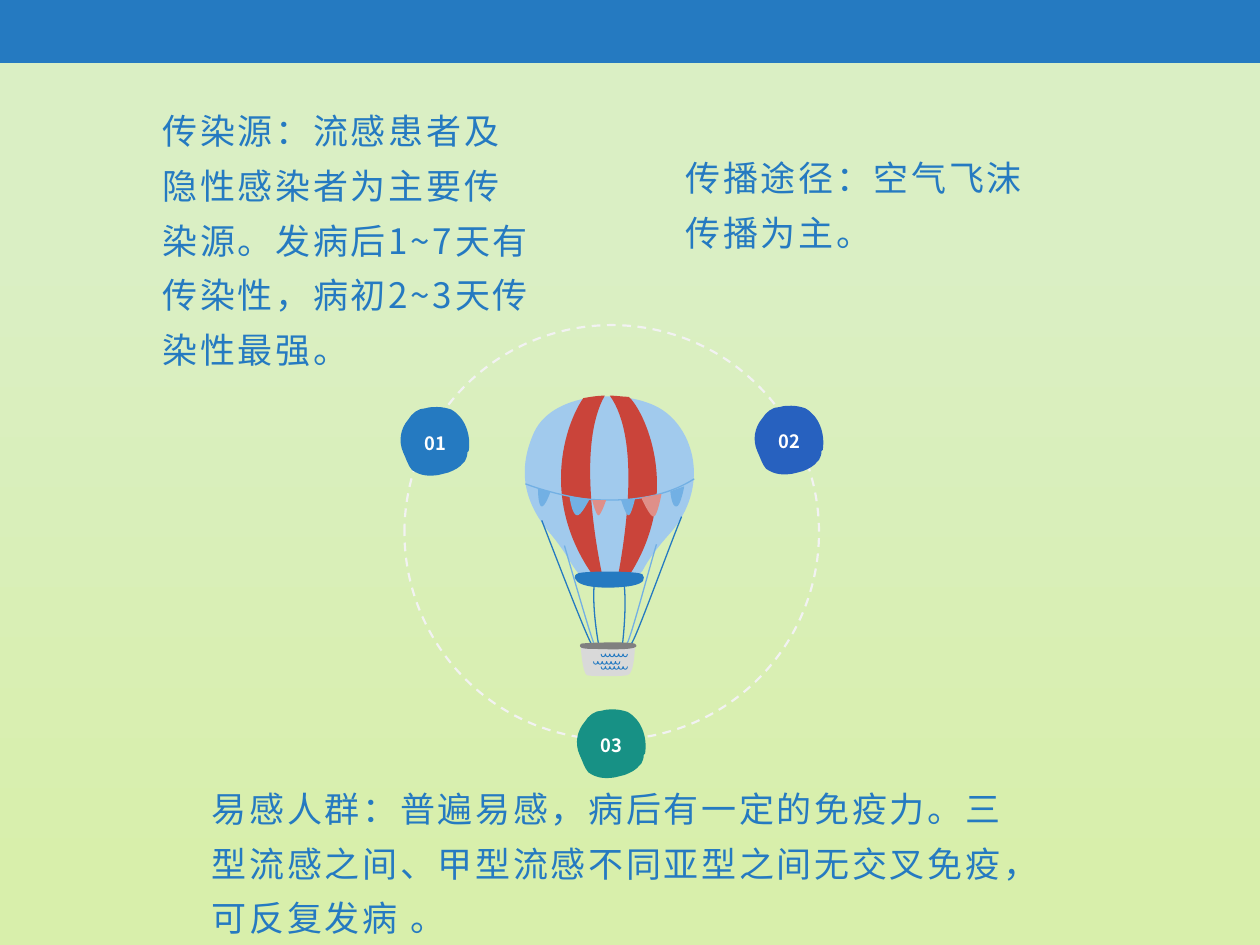
from dataclasses import dataclass

import lxml.etree
import pptx
import pptx.dml.color
import pptx.enum.dml
import pptx.enum.shapes
import pptx.enum.text
import pptx.oxml
import pptx.oxml.ns
import pptx.util
from pptx.util import Inches

FONT = "Noto Sans CJK SC"
COLORS = {
    "blue": "257AC1", "royal": "2761BF", "teal": "179185",
    "sky": "A1CAED", "azure": "72B0E4", "red": "CA443A", "pink": "DF8F89",
    "pale": "D9D9D9", "grey": "808080", "ring": "F2F2F2", "white": "FFFFFF",
    "top": "DAEFC4", "base": "D8EFAB",
}


@dataclass
class Path:
    """A start point and its segments: two numbers a line, six a curve."""
    color: str
    start: tuple
    steps: list


@dataclass
class Badge:
    label: str
    color: str
    x: float
    y: float


@dataclass
class Note:
    text: str
    box: tuple
    anchor: str


BODY = [
    Path("sky", (5.28, 3.27), [
        (5.03, 3.08, 4.4, 3.09, 4.24, 3.43), (4.09, 3.76, 4.18, 4.02, 4.38, 4.25),
        (4.51, 4.41, 4.53, 4.48, 4.59, 4.55), (4.68, 4.65, 5.05, 4.61, 5.1, 4.53),
        (5.15, 4.43, 5.24, 4.32, 5.33, 4.22), (5.62, 3.87, 5.52, 3.45, 5.28, 3.27)]),
]
ROPES = [
    Path("blue", (5.41, 4.1), [(5.3, 4.37, 5.04, 5.09, 5.01, 5.11)]),
    Path("azure", (5.21, 4.32), [(5.12, 4.63, 5.0, 5.09, 4.97, 5.12)]),
    Path("blue", (4.95, 4.61), [(4.95, 4.61, 4.98, 4.76, 4.94, 5.12)]),
    Path("blue", (4.3, 4.13), [(4.4, 4.39, 4.67, 5.09, 4.7, 5.12)]),
    Path("azure", (4.48, 4.33), [(4.57, 4.64, 4.7, 5.09, 4.72, 5.12)]),
    Path("blue", (4.72, 4.61), [(4.72, 4.61, 4.69, 4.76, 4.75, 5.11)]),
]
TRIM = [
    Path("red", (4.8, 3.14), [
        (4.74, 3.14, 4.69, 3.15, 4.63, 3.16), (4.49, 3.36, 4.27, 3.98, 4.73, 4.6),
        (4.75, 4.61, 4.77, 4.61, 4.79, 4.61), (4.73, 4.34, 4.58, 3.53, 4.8, 3.14)]),
    Path("red", (4.99, 3.15), [
        (4.94, 3.15, 4.9, 3.14, 4.84, 3.14), (5.09, 3.49, 4.96, 4.28, 4.9, 4.6),
        (4.92, 4.6, 4.96, 4.59, 4.98, 4.59), (5.44, 3.9, 5.1, 3.24, 4.99, 3.15)]),
    Path("blue", (4.59, 4.55), [
        (4.65, 4.53, 5.08, 4.53, 5.1, 4.56), (5.12, 4.59, 5.12, 4.63, 5.01, 4.65),
        (4.9, 4.67, 4.61, 4.68, 4.57, 4.6), (4.57, 4.6, 4.54, 4.57, 4.59, 4.55)]),
    Path("azure", (4.27, 3.88), [
        (4.27, 3.88, 4.27, 4.02, 4.3, 4.02), (4.33, 4.02, 4.37, 3.9, 4.37, 3.9)]),
    Path("azure", (4.52, 3.94), [
        (4.52, 3.94, 4.54, 4.09, 4.58, 4.09), (4.61, 4.1, 4.68, 3.96, 4.68, 3.96)]),
    Path("azure", (4.93, 3.97), [
        (4.93, 3.97, 4.97, 4.1, 4.99, 4.09), (5.01, 4.09, 5.04, 3.96, 5.04, 3.96)]),
    Path("azure", (5.32, 3.9), [
        (5.32, 3.9, 5.33, 4.03, 5.37, 4.02), (5.4, 4.02, 5.43, 3.87, 5.43, 3.86)]),
    Path("pale", (4.61, 5.13), [
        (4.61, 5.13, 4.62, 5.34, 4.66, 5.36), (4.7, 5.37, 4.92, 5.37, 4.98, 5.36),
        (5.04, 5.35, 5.04, 5.11, 5.04, 5.11)]),
    Path("grey", (4.61, 5.11), [
        (4.62, 5.1, 5.02, 5.09, 5.04, 5.11), (5.12, 5.17, 4.76, 5.15, 4.71, 5.15),
        (4.66, 5.15, 4.58, 5.15, 4.61, 5.11)]),
]
BELT = Path("azure", (4.17, 3.84), [
    (4.17, 3.84, 4.37, 3.92, 4.64, 3.96), (4.88, 3.98, 5.23, 3.98, 5.51, 3.8)])
FLAGS = [
    Path("pink", (4.7, 3.97), [
        (4.7, 3.97, 4.73, 4.09, 4.75, 4.09), (4.77, 4.09, 4.81, 3.97, 4.81, 3.97)]),
    Path("pink", (5.09, 3.95), [
        (5.09, 3.95, 5.16, 4.11, 5.19, 4.1), (5.22, 4.09, 5.25, 3.92, 5.25, 3.92)]),
]
WEAVE = [(4.77, 5.19), (4.71, 5.25), (4.77, 5.29)]
BLOB = ((0.29, 0), [
    (0.33, 0, 0.37, 0.01, 0.4, 0.02), (0.51, 0.08, 0.56, 0.22, 0.54, 0.35),
    (0.53, 0.36), (0.53, 0.39, 0.52, 0.41, 0.51, 0.43), (0.5, 0.44),
    (0.47, 0.48, 0.43, 0.5, 0.38, 0.52), (0.35, 0.53, 0.33, 0.53, 0.3, 0.54),
    (0.23, 0.55, 0.16, 0.55, 0.09, 0.5), (0.06, 0.47, 0.04, 0.4, 0.02, 0.36),
    (-0.02, 0.27, 0, 0.17, 0.06, 0.1), (0.09, 0.05, 0.14, 0.01, 0.2, 0.01),
    (0.23, 0, 0.26, 0, 0.29, 0)])
BADGES = [
    Badge("02", "royal", 5.99, 3.22),
    Badge("01", "blue", 3.18, 3.23),
    Badge("03", "teal", 4.58, 5.63),
]
NOTES = [
    Note("传染源：流感患者及隐性感染者为主要传染源。发病后1~7天有传染性，病初2~3天传染性最强。",
         (1.22, 0.63, 3.12, 2.35), "BOTTOM"),
    Note("传播途径：空气飞沫传播为主。", (5.37, 0.63, 3.12, 1.42), "BOTTOM"),
    Note("易感人群：普遍易感，病后有一定的免疫力。三型流感之间、甲型流感不同亚型之间无交叉免疫，可反复发病 。",
         (1.61, 6.11, 6.52, 1.29), "TOP"),
]


def rgb(name: str) -> pptx.dml.color.RGBColor:
    return pptx.dml.color.RGBColor.from_string(COLORS[name])


def bend(shape, steps: list) -> None:
    """Join each three lines that stand for a curve into one cubic curve."""
    qn = pptx.oxml.ns.qn
    lines = iter(list(shape._element.iter(qn("a:lnTo"))))
    for step in steps:
        line = next(lines)
        if len(step) == 6:
            line.addprevious(curve := lxml.etree.Element(qn("a:cubicBezTo")))
            for part in (line, next(lines), next(lines)):
                curve.append(part[0])
                part.getparent().remove(part)


def draw(shapes, path: Path, width: float = 0) -> None:
    """Fill the path, or stroke it when a width in points is given."""
    pen = shapes.build_freeform(*map(Inches, path.start))
    spots = [(Inches(x), Inches(y)) for step in path.steps
             for x, y in zip(step[::2], step[1::2])]
    pen.add_line_segments(spots, close=not width)
    shape = pen.convert_to_shape()
    bend(shape, path.steps)
    shape.shadow.inherit = False
    if width:
        shape.fill.background()
        shape.line.color.rgb = rgb(path.color)
        shape.line.width = pptx.util.Pt(width)
    else:
        shape.fill.solid()
        shape.fill.fore_color.rgb = rgb(path.color)
        shape.line.fill.background()


def write(shapes, text: str, box: tuple, anchor: str, size: float, color: str):
    """Add a text box and return its paragraph."""
    frame = shapes.add_textbox(*map(Inches, box)).text_frame
    frame.word_wrap = True
    frame.vertical_anchor = pptx.enum.text.MSO_ANCHOR[anchor]
    frame.margin_left = frame.margin_right = Inches(0.07)
    frame.margin_top = frame.margin_bottom = Inches(0.04)
    para = frame.paragraphs[0]
    para.text = text
    font = para.font
    font.name, font.size = FONT, pptx.util.Pt(size)
    font.color.rgb = rgb(color)
    east = pptx.oxml.parse_xml(f'<a:ea {pptx.oxml.ns.nsdecls("a")} typeface="{FONT}"/>')
    font._rPr.append(east)
    return para


def balloon(shapes) -> None:
    for path in BODY:
        draw(shapes, path)
    for path in ROPES:
        draw(shapes, path, 0.75)
    for path in TRIM:
        draw(shapes, path)
    pitch = 0.21 / 6
    for x, y in WEAVE:
        arcs = [(x + i * pitch, y + 0.03, x + (i + 1) * pitch, y + 0.03,
                 x + (i + 1) * pitch, y) for i in range(6)]
        draw(shapes, Path("blue", (x, y), arcs), 0.5)
    draw(shapes, BELT, 0.75)
    for path in FLAGS:
        draw(shapes, path)


def main() -> None:
    deck = pptx.Presentation()
    deck.slide_width, deck.slide_height = Inches(10), Inches(7.5)
    slide = deck.slides.add_slide(deck.slide_layouts[6])
    shapes = slide.shapes
    fill = slide.background.fill
    fill.gradient()
    fill.gradient_angle = 270
    for stop, name, place in zip(fill.gradient_stops, ("top", "base"), (0.25, 0.94)):
        stop.color.rgb, stop.position = rgb(name), place

    kinds = pptx.enum.shapes.MSO_SHAPE
    band = shapes.add_shape(kinds.RECTANGLE, 0, 0, deck.slide_width, Inches(0.5))
    band.shadow.inherit = False
    band.fill.solid()
    band.fill.fore_color.rgb = rgb("blue")
    band.line.fill.background()
    ring = shapes.add_shape(kinds.OVAL, *map(Inches, (3.21, 2.58, 3.29, 3.29)))
    ring.shadow.inherit = False
    ring.fill.background()
    ring.line.color.rgb = rgb("ring")
    ring.line.width = pptx.util.Pt(1.25)
    ring.line.dash_style = pptx.enum.dml.MSO_LINE.DASH

    balloon(shapes.add_group_shape().shapes)
    for note in NOTES:
        para = write(shapes, note.text, note.box, note.anchor, 20, "blue")
        para.line_spacing, para.space_after = 1.3, pptx.util.Pt(10)
        para.font._rPr.set("spc", "150")
    start, steps = BLOB
    for badge in BADGES:
        x, y = badge.x, badge.y
        moved = [tuple(v + (x, y)[i % 2] for i, v in enumerate(step)) for step in steps]
        draw(shapes, Path(badge.color, (start[0] + x, start[1] + y), moved))
    for badge in BADGES:
        box = (badge.x - 0.08, badge.y - 0.07, 0.71, 0.71)
        para = write(shapes, badge.label, box, "MIDDLE", 10.5, "white")
        para.alignment = pptx.enum.text.PP_ALIGN.CENTER
        para.font.bold = True
    deck.save("out.pptx")


if __name__ == "__main__":
    main()
